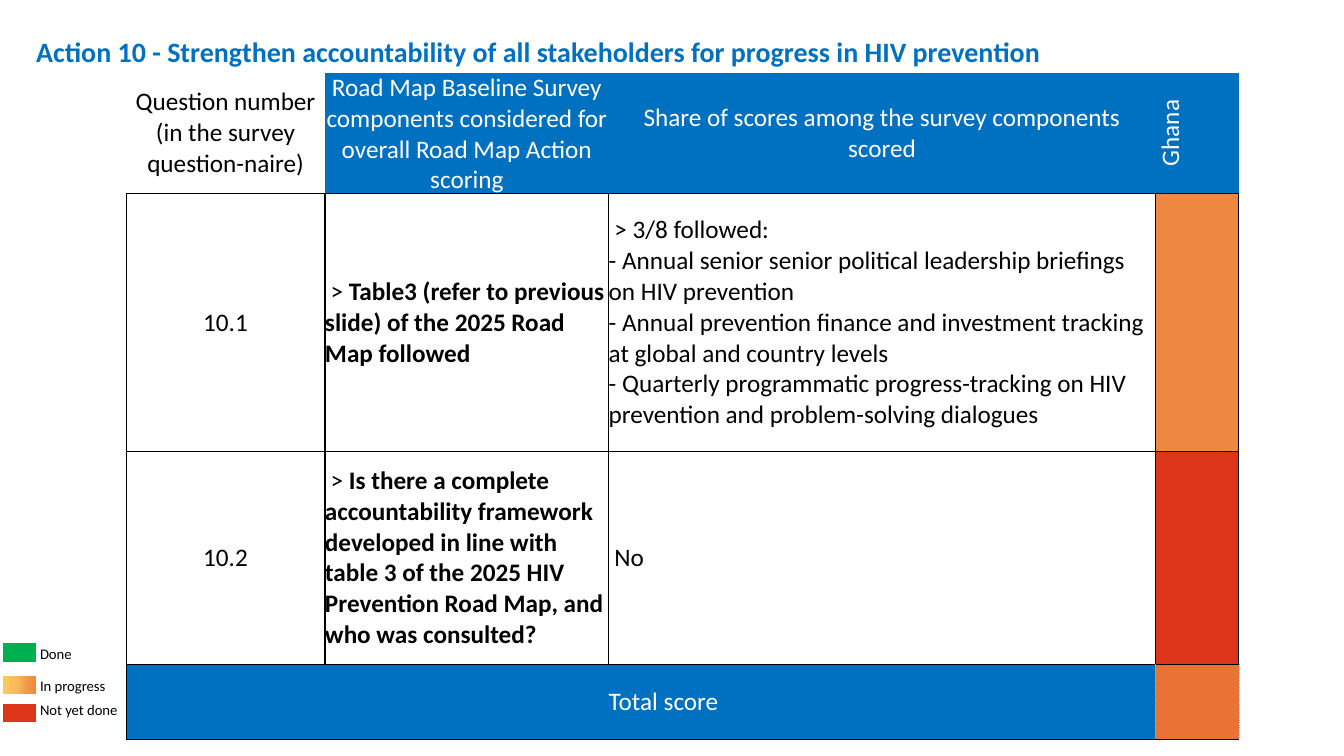
from lxml.etree import SubElement
from pptx import Presentation
from pptx.dml.color import RGBColor
from pptx.enum.text import MSO_ANCHOR, PP_ALIGN
from pptx.oxml import parse_xml
from pptx.oxml.ns import nsdecls, qn
from pptx.util import Cm, Pt

COLORS = {
    "blue": "0070C0", "black": "000000", "white": "FFFFFF", "green": "00B050",
    "orange": "EE873F", "deep orange": "E97235", "red": "DD3519", "pale blue": "8DB4E2",
}
PROGRESS_GRADIENT = [(0, "FBCA5F"), (44, "F8B957"), (73, "F19847"), (100, "EE873F")]
NO_TABLE_STYLE = "{2D5ABB26-0587-4C30-8999-92F81FD0307C}"
FONT = "Calibri"

TITLE = "Action 10 - Strengthen accountability of all stakeholders for progress in HIV prevention"
# Each cell is a list of paragraphs; a paragraph is (plain part, bold part).
ROWS = [
    [
        [("Question number (in the survey question-naire)", "")],
        [("Road Map Baseline Survey components considered for overall Road Map Action scoring", "")],
        [("Share of scores among the survey components scored", "")],
        [("Ghana", "")],
    ],
    [
        [("10.1", "")],
        [(" > ", "Table3 (refer to previous slide) of the 2025 Road Map followed")],
        [
            (" > 3/8 followed:", ""),
            ("- Annual senior senior political leadership briefings on HIV prevention", ""),
            ("- Annual prevention finance and investment tracking at global and country levels", ""),
            ("- Quarterly programmatic progress-tracking on HIV prevention and "
             "problem-solving dialogues", ""),
        ],
        [],
    ],
    [
        [("10.2", "")],
        [(" > ", "Is there a complete accountability framework developed in line with table 3 "
                 "of the 2025 HIV Prevention Road Map, and who was consulted?")],
        [(" No", "")],
        [],
    ],
    [[], [], [("Total score", "")], []],
]
FILLS = [
    [None, "blue", "blue", "blue"],
    [None, None, None, "orange"],
    [None, None, None, "red"],
    ["blue", "blue", "blue", "deep orange"],
]
COLUMN_WIDTHS = [5.01, 7.15, 13.77, 2.11]
ROW_HEIGHTS = [2.97, 6.5, 5.36, 1.88]

SOLID = ("black", 1, "solid")
THIN = ("black", 0.5, "solid")
DOTTED = ("pale blue", 0.5, "sysDot")
HEADER_BORDERS = {"B": SOLID}
BODY_BORDERS = {side: SOLID for side in "LRTB"}
TOTAL_BORDERS = [
    {"L": SOLID, "T": SOLID, "B": THIN},
    {"T": SOLID, "B": THIN},
    {"T": SOLID, "R": DOTTED, "B": THIN},
    {"L": DOTTED, "T": SOLID, "R": DOTTED, "B": THIN},
]
BORDERS = [[HEADER_BORDERS] * 4, [BODY_BORDERS] * 4, [BODY_BORDERS] * 4, TOTAL_BORDERS]

# Label, swatch fill, swatch top, label top, label width
LEGEND = [
    ("Done", "green", 16.21, 16.13, 1.73),
    ("In progress", "gradient", 17.04, 16.92, 2.39),
    ("Not yet done", "red", 17.73, 17.53, 2.69),
]


def add_run(paragraph, text, size, color, bold=False):
    run = paragraph.add_run()
    run.text = text
    run.font.name = FONT
    run.font.size = Pt(size)
    run.font.bold = bold
    run.font.color.rgb = RGBColor.from_string(COLORS[color])


def add_label(slide, text, left, top, width, height, size, color, bold=False):
    frame = slide.shapes.add_textbox(Cm(left), Cm(top), Cm(width), Cm(height)).text_frame
    frame.word_wrap = True
    add_run(frame.paragraphs[0], text, size, color, bold)
    return frame.paragraphs[0]


def add_plain_table(slide, left, top, widths, heights):
    """Add a table without any built-in style or cell margins."""
    frame = slide.shapes.add_table(len(heights), len(widths), Cm(left), Cm(top),
                                   Cm(sum(widths)), Cm(sum(heights)))
    table = frame.table
    table.first_row = table.horz_banding = False
    table._tbl.tblPr.find(qn("a:tableStyleId")).text = NO_TABLE_STYLE
    for column, width in zip(table.columns, widths):
        column.width = Cm(width)
    for row, height in zip(table.rows, heights):
        row.height = Cm(height)
    for cell in table.iter_cells():
        cell.margin_left = cell.margin_right = cell.margin_top = cell.margin_bottom = 0
        cell.vertical_anchor = MSO_ANCHOR.MIDDLE
    return table


def fill_cell(cell, color):
    if color == "gradient":
        stops = "".join(f'<a:gs pos="{position * 1000}"><a:srgbClr val="{value}"/></a:gs>'
                        for position, value in PROGRESS_GRADIENT)
        cell._tc.get_or_add_tcPr().append(parse_xml(
            f'<a:gradFill {nsdecls("a")}><a:gsLst>{stops}</a:gsLst><a:lin ang="0"/></a:gradFill>'))
    elif color:
        cell.fill.solid()
        cell.fill.fore_color.rgb = RGBColor.from_string(COLORS[color])
    else:
        cell.fill.background()


def set_borders(cell, borders):
    sides = [side for side in "LRTB" if side in borders]
    for index, side in enumerate(sides):
        color, width, dash = borders[side]
        cell._tc.get_or_add_tcPr().insert(index, parse_xml(
            f'<a:ln{side} {nsdecls("a")} w="{Pt(width)}"><a:solidFill>'
            f'<a:srgbClr val="{COLORS[color]}"/></a:solidFill>'
            f'<a:prstDash val="{dash}"/></a:ln{side}>'))


def write_cell(cell, paragraphs, color, alignment):
    for index, (plain, bold) in enumerate(paragraphs):
        frame = cell.text_frame
        paragraph = frame.add_paragraph() if index else frame.paragraphs[0]
        paragraph.alignment = alignment
        add_run(paragraph, plain, 18, color)
        if bold:
            add_run(paragraph, bold, 18, color, True)


def add_score_table(slide):
    table = add_plain_table(slide, 3.18, 1.83, COLUMN_WIDTHS, ROW_HEIGHTS)
    for row, contents in enumerate(ROWS):
        for column, paragraphs in enumerate(contents):
            cell = table.cell(row, column)
            fill = FILLS[row][column]
            centred = row == 0 or column == 0
            write_cell(cell, paragraphs, "white" if fill else "black",
                       PP_ALIGN.CENTER if centred else PP_ALIGN.LEFT)
            fill_cell(cell, fill)
            set_borders(cell, BORDERS[row][column])
    country = table.cell(0, 3)
    country.vertical_anchor = MSO_ANCHOR.BOTTOM
    country._tc.get_or_add_tcPr().set("vert", "vert270")


def add_legend(slide):
    for label, color, swatch_top, label_top, label_width in LEGEND:
        swatch = add_plain_table(slide, 0.08, swatch_top, [0.83], [0.46]).cell(0, 0)
        fill_cell(swatch, color)
        # A small empty-line size keeps the swatch row from growing.
        SubElement(swatch.text_frame.paragraphs[0]._p, qn("a:endParaRPr"), sz="800")
        add_label(slide, label, 0.76, label_top, label_width, 0.72, 10.5, "black")


def main():
    presentation = Presentation()
    presentation.slide_width, presentation.slide_height = Cm(33.87), Cm(19.05)
    slide = presentation.slides.add_slide(presentation.slide_layouts[6])
    title = add_label(slide, TITLE, 0.66, 0.69, 32.56, 1.14, 20, "blue", True)
    title.alignment = PP_ALIGN.JUSTIFY
    title.line_spacing = 1.07
    title.space_after = Pt(8)
    add_score_table(slide)
    add_legend(slide)
    presentation.save("out.pptx")


if __name__ == "__main__":
    main()
